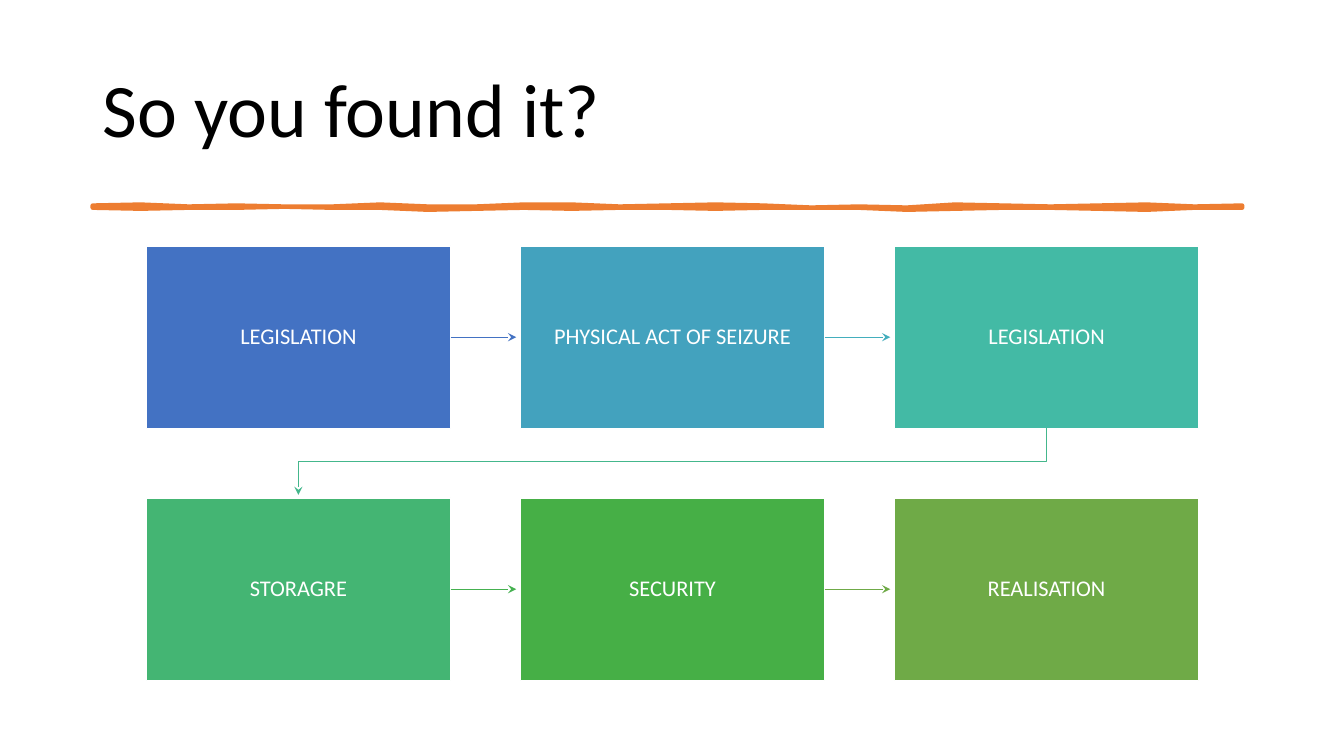
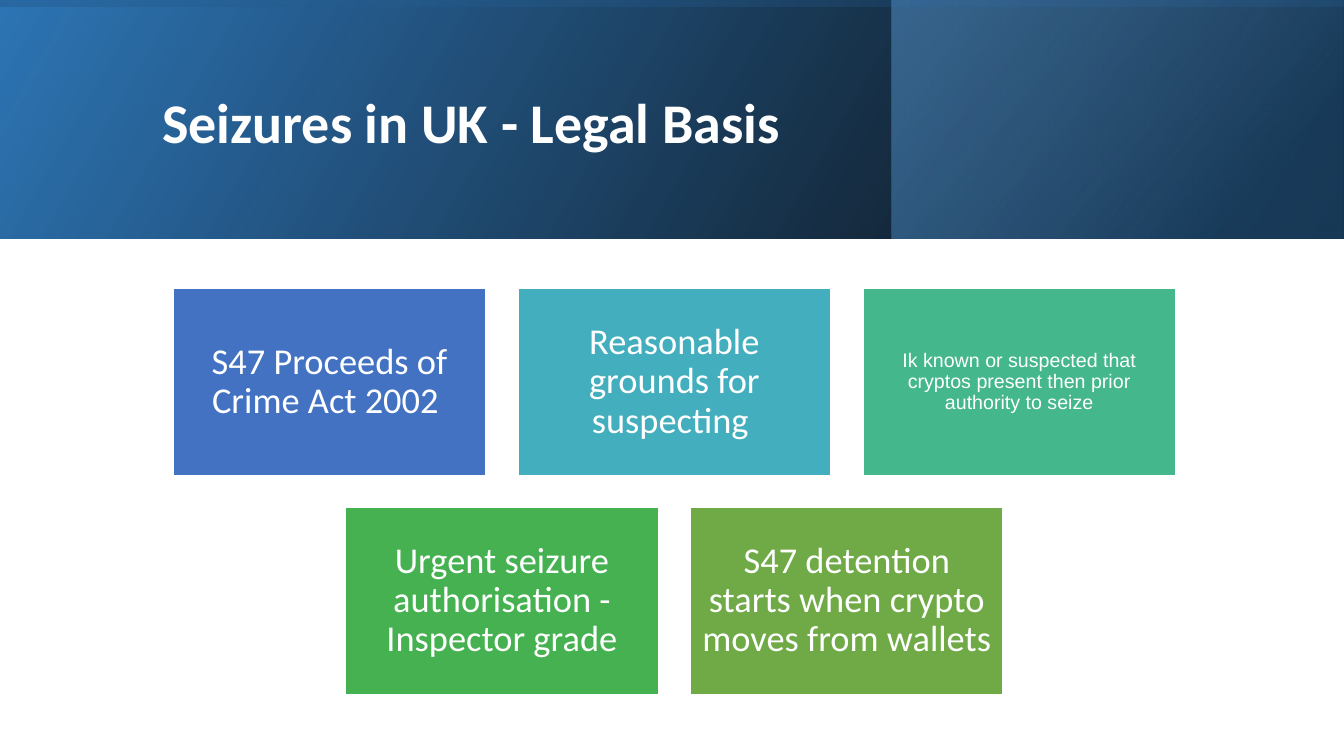
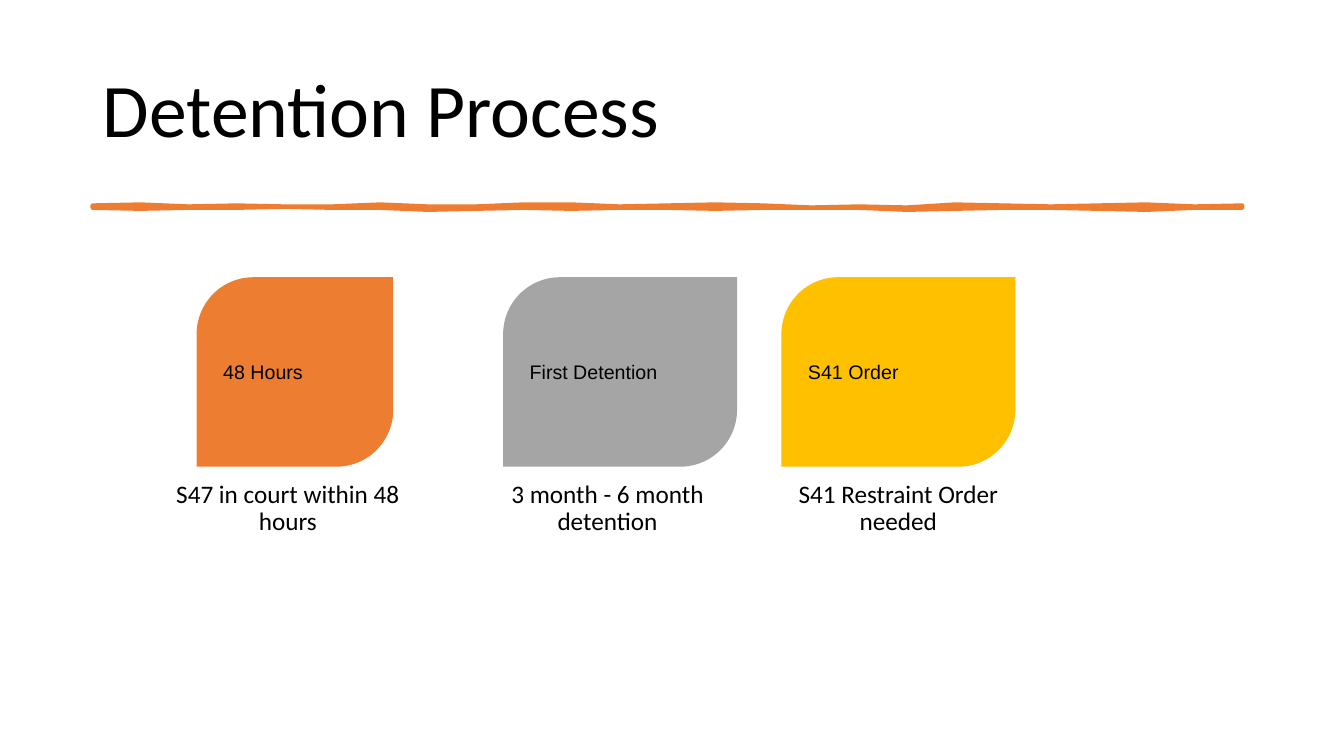
from lxml import etree
from pptx import Presentation
from pptx import util as u
from pptx.dml.color import RGBColor
from pptx.enum import shapes, text
from pptx.oxml.ns import qn

WHITE = RGBColor(0xFF, 0xFF, 0xFF)
BLACK = RGBColor(0, 0, 0)
ORANGE = RGBColor(0xED, 0x7D, 0x31)
GREY = RGBColor(0xA5, 0xA5, 0xA5)
GOLD = RGBColor(0xFF, 0xC0, 0x00)
BLUE = RGBColor(0x43, 0x72, 0xC3)
STEEL = RGBColor(0x43, 0xA2, 0xBE)
AQUA = RGBColor(0x43, 0xAE, 0xBD)
TEAL = RGBColor(0x43, 0xBA, 0xA5)
MINT = RGBColor(0x44, 0xB7, 0x8C)
JADE = RGBColor(0x44, 0xB5, 0x73)
GREEN = RGBColor(0x45, 0xB1, 0x50)
LEAF = RGBColor(0x46, 0xAF, 0x46)
OLIVE = RGBColor(0x6F, 0xAA, 0x47)
NAVY = RGBColor(0x1E, 0x4E, 0x79)
OCEAN = RGBColor(0x2E, 0x75, 0xB5)
SKY = RGBColor(0x5B, 0x9B, 0xD5)

WIDTH, HEIGHT = 13.33, 7.5
BAND_HEIGHT = 2.37
TITLE_AREA = (0.92, 0.4, 11.5, 1.45)
HEADING, BODY = "Calibri", "Arial"
CENTER, LEFT = text.PP_ALIGN.CENTER, text.PP_ALIGN.LEFT
MIDDLE, TOP = text.MSO_ANCHOR.MIDDLE, text.MSO_ANCHOR.TOP

# Brush stroke edges, in hundredths of an inch below y = 2, at even steps
STROKE_TOP = [4, 3, 5, 4, 5, 5, 3, 5, 5, 3, 3, 5, 4,
              3, 4, 6, 5, 6, 3, 4, 5, 4, 3, 5, 4]
STROKE_BOTTOM = [6, 7, 6, 6, 5, 6, 6, 8, 7, 6, 7, 6, 6,
                 7, 6, 6, 6, 8, 7, 6, 6, 7, 8, 6, 6]


def inches(*lengths):
    return [u.Inches(length) for length in lengths]


def write(shape, words, size, font=HEADING, color=WHITE, align=CENTER,
          anchor=MIDDLE, insets=(0.1, 0.05), spacing=0.9, bold=False):
    """Set a shape's text and format it."""
    frame = shape.text_frame
    frame.text = words
    frame.word_wrap = True
    frame.auto_size = text.MSO_AUTO_SIZE.NONE
    frame.vertical_anchor = anchor
    frame.margin_left = frame.margin_right = u.Inches(insets[0])
    frame.margin_top = frame.margin_bottom = u.Inches(insets[1])
    para = frame.paragraphs[0]
    para.alignment = align
    para.line_spacing = spacing
    span = para.runs[0].font
    span.name, span.size, span.bold = font, u.Pt(size), bold
    span.color.rgb = color


def add_box(page, area, fill=None, line=None,
            kind=shapes.MSO_SHAPE.RECTANGLE):
    box = page.shapes.add_shape(kind, *inches(*area))
    box.shadow.inherit = False
    if fill is not None:
        box.fill.solid()
        box.fill.fore_color.rgb = fill
    if line is None:
        box.line.fill.background()
    else:
        box.line.color.rgb = line
        box.line.width = u.Pt(1)
    return box


def add_title(page, words, area=TITLE_AREA, size=54, color=BLACK, bold=False):
    title = page.shapes.title
    title.left, title.top, title.width, title.height = inches(*area)
    write(title, words, size, color=color, align=LEFT, bold=bold)
    page.shapes.element.append(title.element)  # bring to front


def add_brush_stroke(page):
    left, length = 0.92, 11.4
    step = length / (len(STROKE_TOP) - 1)
    top = [(left + i * step, 2 + y / 100) for i, y in enumerate(STROKE_TOP)]
    bottom = [(left + i * step, 2 + y / 100)
              for i, y in enumerate(STROKE_BOTTOM)]
    outline = [inches(*point) for point in top + bottom[::-1]]
    builder = page.shapes.build_freeform(*outline[0])
    builder.add_line_segments(outline[1:], close=True)
    stroke = builder.convert_to_shape()
    stroke.shadow.inherit = False
    stroke.fill.solid()
    stroke.fill.fore_color.rgb = ORANGE
    stroke.line.color.rgb = ORANGE
    stroke.line.width = u.Pt(3.25)
    etree.SubElement(stroke.line._get_or_add_ln(), qn("a:round"))


def add_arrow(page, start, end, color, kind=shapes.MSO_CONNECTOR.STRAIGHT):
    arrow = page.shapes.add_connector(kind, *inches(*start, *end))
    arrow.line.color.rgb = color
    arrow.line.width = u.Pt(0.75)
    properties = arrow.element.spPr
    etree.SubElement(properties.find(qn("a:ln")), qn("a:tailEnd"),
                     type="stealth")
    etree.SubElement(properties, qn("a:effectLst"))
    return arrow


def add_down_elbow(page, start, end, color):
    """Elbow that leaves downwards: a sideways elbow turned by 90 degrees."""
    middle_x, middle_y = (start[0] + end[0]) / 2, (start[1] + end[1]) / 2
    half_run, half_drop = (start[0] - end[0]) / 2, (end[1] - start[1]) / 2
    elbow = add_arrow(page, (middle_x - half_drop, middle_y - half_run),
                      (middle_x + half_drop, middle_y + half_run),
                      color, shapes.MSO_CONNECTOR.ELBOW)
    elbow.element.spPr.find(qn("a:xfrm")).set("rot", str(90 * 60000))


def add_gradient_box(page, area, stops, angle, rotation=0):
    """Mirrored rectangle; stops are (position %, colour, opacity %)."""
    box = add_box(page, area)
    box.rotation = rotation
    box.fill.background()
    properties = box.element.spPr
    properties.find(qn("a:xfrm")).set("flipH", "1")
    gradient = etree.Element(qn("a:gradFill"), rotWithShape="1")
    stop_list = etree.SubElement(gradient, qn("a:gsLst"))
    for position, color, opacity in stops:
        stop = etree.SubElement(stop_list, qn("a:gs"),
                                pos=str(position * 1000))
        tint = etree.SubElement(stop, qn("a:srgbClr"), val=str(color))
        etree.SubElement(tint, qn("a:alpha"), val=str(opacity * 1000))
    etree.SubElement(gradient, qn("a:lin"), ang=str(angle * 60000), scaled="0")
    properties.replace(properties.find(qn("a:noFill")), gradient)


def build_found(page):
    add_title(page, "So you found it?")
    add_brush_stroke(page)
    left, top, width, height = 1.45, 2.44, 3.02, 1.81
    column_step, row_step, columns = 3.71, 2.5, 3
    steps = [("LEGISLATION", BLUE, BLUE),
             ("PHYSICAL ACT OF SEIZURE", STEEL, AQUA),
             ("LEGISLATION", TEAL, MINT),
             ("STORAGRE", JADE, GREEN),
             ("SECURITY", LEAF, OLIVE),
             ("REALISATION", OLIVE, None)]
    for i, (words, fill, arrow_color) in enumerate(steps):
        row, column = divmod(i, columns)
        x, y = left + column * column_step, top + row * row_step
        box = add_box(page, (x, y, width, height), fill, WHITE)
        write(box, words, 16, insets=(0.15, 0.16))
        if column < columns - 1:
            middle = y + height / 2
            add_arrow(page, (x + width, middle),
                      (x + column_step - 0.04, middle), arrow_color)
        elif arrow_color is not None:
            add_down_elbow(page, (x + width / 2, y + height),
                           (left + width / 2, y + row_step - 0.03),
                           arrow_color)


def build_legal_basis(page):
    # Layered title band
    add_gradient_box(page, (0, 0, WIDTH, BAND_HEIGHT),
                     [(0, BLACK, 96), (100, OCEAN, 100)], 330)
    add_gradient_box(page, (8.84, 0, 4.48, BAND_HEIGHT),
                     [(0, NAVY, 68), (19, NAVY, 68), (100, SKY, 48)], 320)
    offset = (WIDTH - BAND_HEIGHT) / 2
    add_gradient_box(page, (offset, -offset, BAND_HEIGHT, WIDTH),
                     [(0, OCEAN, 16), (23, OCEAN, 16),
                      (99, BLACK, 45), (100, BLACK, 45)], 350, rotation=270)
    add_title(page, "Seizures in UK - Legal Basis", (1.51, 0.38, 10.63, 1.72),
              40, WHITE, bold=True)

    # Rows of cards, the second one centred under the first
    width, height, column_step, row_step = 3.1, 1.86, 3.42, 2.17
    rows = [
        (1.72, [("S47 Proceeds of Crime Act 2002 ", BLUE, HEADING, 26),
                ("Reasonable grounds for suspecting ", AQUA, HEADING, 26),
                ("Ik known or suspected that cryptos present then prior "
                 "authority to seize", MINT, BODY, 14)]),
        (3.43, [("Urgent seizure authorisation - Inspector grade",
                 GREEN, HEADING, 26),
                ("S47 detention starts when crypto moves from wallets",
                 OLIVE, HEADING, 26)]),
    ]
    for row, (left, cards) in enumerate(rows):
        for column, (words, fill, font, size) in enumerate(cards):
            box = add_box(page, (left + column * column_step,
                                 2.86 + row * row_step, width, height),
                          fill, WHITE)
            write(box, words, size, font, insets=(0.11, 0.11))


def build_detention(page):
    add_title(page, "Detention Process")
    add_brush_stroke(page)
    # Leaf left and width, caption left and width
    stages = [
        ("48 Hours", ORANGE, 1.95, 1.95,
         "S47 in court within 48 hours", 1.65, 2.41),
        ("First Detention", GREY, 4.99, 2.32,
         "3 month - 6 month detention", 4.82, 2.41),
        ("S41 Order", GOLD, 7.75, 2.32,
         "S41 Restraint Order needed", 7.75, 2.32),
    ]
    for label, fill, left, width, caption, caption_left, caption_width in stages:
        leaf = add_box(page, (left, 2.75, width, 1.88), fill,
                       kind=shapes.MSO_SHAPE.ROUND_2_DIAG_RECTANGLE)
        leaf.adjustments[0], leaf.adjustments[1] = 0.3, 0
        write(leaf, label, 14, BODY, BLACK, LEFT, insets=(0.1, 0.1), spacing=1)
        box = page.shapes.add_textbox(
            *inches(caption_left, 4.78, caption_width, 1.02))
        write(box, caption, 18, color=BLACK, anchor=TOP, insets=(0, 0))


def main():
    deck = Presentation()
    deck.slide_width, deck.slide_height = inches(WIDTH, HEIGHT)
    title_only = deck.slide_layouts[5]
    for build in (build_found, build_legal_basis, build_detention):
        build(deck.slides.add_slide(title_only))
    deck.save("out.pptx")


if __name__ == "__main__":
    main()
